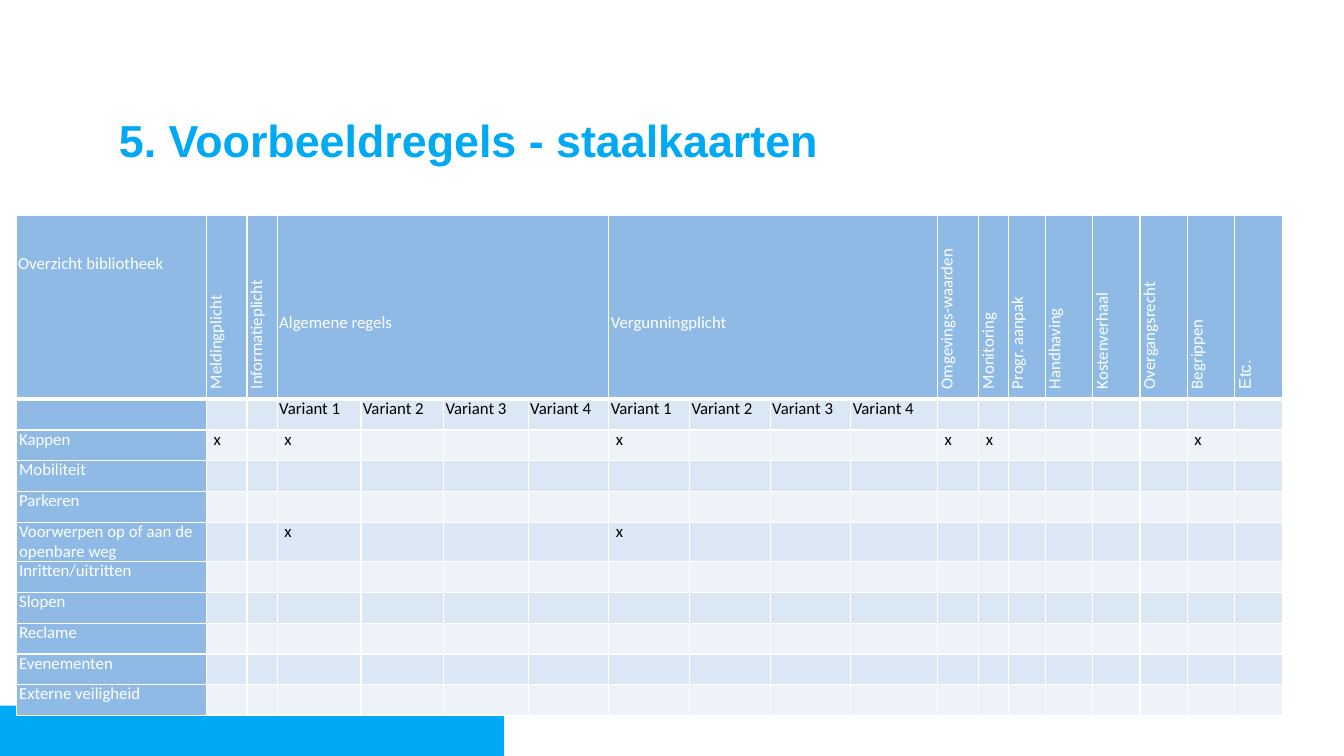
from math import cos, pi, sin

from lxml.etree import SubElement
from pptx import Presentation
from pptx.dml.color import RGBColor
from pptx.enum.text import MSO_ANCHOR, MSO_AUTO_SIZE, PP_ALIGN
from pptx.oxml.ns import qn
from pptx.util import Inches, Pt

TITLE = "5. Voorbeeldregels - staalkaarten"
CORNER_HEADER = "Overzicht bibliotheek"
WIDE_HEADERS = {3: "Algemene regels", 7: "Vergunningplicht"}
VERTICAL_HEADERS = {
    1: "Meldingplicht", 2: "Informatieplicht", 11: "Omgevings-waarden",
    12: "Monitoring", 13: "Progr. aanpak", 14: "Handhaving",
    15: "Kostenverhaal", 16: "Overgangsrecht", 17: "Begrippen", 18: "Etc.",
}
VARIANTS = 4
# Topic and the columns that are marked for it
TOPICS = [
    ("Kappen", (1, 3, 7, 11, 12, 17)),
    ("Mobiliteit", ()),
    ("Parkeren", ()),
    ("Voorwerpen op of aan de openbare weg", (3, 7)),
    ("Inritten/uitritten", ()),
    ("Slopen", ()),
    ("Reclame", ()),
    ("Evenementen", ()),
    ("Externe veiligheid", ()),
]

COLORS = {"accent": "00A9F3", "header": "8EBAE5", "odd": "DBE7F5",
          "even": "EEF3FA", "white": "FFFFFF", "black": "000000"}
COLUMN_WIDTHS = [1.89, 0.4, 0.3, 0.83, 0.82, 0.84, 0.8, 0.8, 0.8, 0.8, 0.86,
                 0.41, 0.29, 0.37] + [0.47] * 5
HEADER_HEIGHT, ROW_HEIGHT, TWO_LINE_HEIGHT = 1.82, 0.26, 0.39
ROW_HEIGHTS = [HEADER_HEIGHT, ROW_HEIGHT] + [
    TWO_LINE_HEIGHT if len(topic) > 30 else ROW_HEIGHT for topic, _ in TOPICS]
TABLE_LEFT, TABLE_TOP = 0.16, 2.14
LINE_PITCH = 14
BAND_TOP, BAND_RADIUS, BAND_WIDTH = 7.02, 0.49, 2.94
BAND_LEFTS = (-0.01, 2.46)


def color(name):
    return RGBColor.from_string(COLORS[name])


def set_format(target, values):
    for name, value in values.items():
        setattr(target, name, value)


def add_band(slide, left):
    """Draw a footer band whose top right corner is a quarter circle."""
    bottom = BAND_TOP + BAND_RADIUS
    center = left + BAND_WIDTH - BAND_RADIUS
    steps = 24
    angles = [pi / 2 * (1 - step / steps) for step in range(steps + 1)]
    arc = [(center + BAND_RADIUS * cos(angle), bottom - BAND_RADIUS * sin(angle))
           for angle in angles]
    builder = slide.shapes.build_freeform(left, bottom, scale=Inches(1))
    builder.add_line_segments([(left, BAND_TOP)] + arc, close=True)
    band = builder.convert_to_shape()
    band.shadow.inherit = False
    band.fill.solid()
    band.fill.fore_color.rgb = color("accent")
    band.line.fill.background()


def style_cell(cell, fill, bottom_width):
    properties = cell._tc.get_or_add_tcPr()
    for side, width in (("L", 1), ("R", 1), ("T", 1), ("B", bottom_width)):
        line = SubElement(properties, qn(f"a:ln{side}"), w=str(Pt(width)))
        solid = SubElement(line, qn("a:solidFill"))
        SubElement(solid, qn("a:srgbClr"), val=COLORS["white"])
    cell.fill.solid()
    cell.fill.fore_color.rgb = color(fill)
    set_format(cell, {"margin_left": Inches(0.02), "margin_right": Inches(0.02),
                      "margin_top": 0, "margin_bottom": 0})
    cell.text_frame.paragraphs[0].line_spacing = Pt(LINE_PITCH)


def write(cell, text, ink, font="Calibri", left=0.02, lines_above=0):
    cell.margin_left = Inches(left)
    cell.margin_top = Pt(LINE_PITCH * lines_above)
    run = cell.text_frame.paragraphs[0].add_run()
    run.text = text
    set_format(run.font, {"name": font, "size": Pt(12), "bold": False})
    run.font.color.rgb = color(ink)


def write_vertical(cell, text):
    cell._tc.get_or_add_tcPr().set("vert", "vert270")
    paragraph = cell.text_frame.paragraphs[0]
    paragraph._p.get_or_add_pPr().set("marL", str(Inches(0.08)))
    write(cell, text, "white", "Arial" if text == "Etc." else "Calibri")


def add_overview(slide):
    frame = slide.shapes.add_table(
        len(ROW_HEIGHTS), len(COLUMN_WIDTHS), Inches(TABLE_LEFT), Inches(TABLE_TOP),
        Inches(sum(COLUMN_WIDTHS)), Inches(sum(ROW_HEIGHTS)))
    table = frame.table
    for column, width in zip(table.columns, COLUMN_WIDTHS):
        column.width = Inches(width)
    for row, height in zip(table.rows, ROW_HEIGHTS):
        row.height = Inches(height)

    for row in range(len(ROW_HEIGHTS)):
        for column in range(len(COLUMN_WIDTHS)):
            body = "odd" if row % 2 else "even"
            fill = "header" if row == 0 or column == 0 else body
            style_cell(table.cell(row, column), fill, 3 if row == 0 else 1)

    write(table.cell(0, 0), CORNER_HEADER, "white", lines_above=2)
    for column, text in VERTICAL_HEADERS.items():
        write_vertical(table.cell(0, column), text)
    for start, text in WIDE_HEADERS.items():
        table.cell(0, start).merge(table.cell(0, start + VARIANTS - 1))
        write(table.cell(0, start), text, "white", lines_above=5)
        for offset in range(VARIANTS):
            write(table.cell(1, start + offset), f"Variant {offset + 1}", "black")
    for row, (topic, marked) in enumerate(TOPICS, start=2):
        write(table.cell(row, 0), topic, "white", left=0.03)
        for column in marked:
            write(table.cell(row, column), "x", "black", left=0.07)


def add_title(slide):
    title = slide.shapes.title
    set_format(title, {"left": Inches(1.18), "top": Inches(1.18),
                       "width": Inches(10.97), "height": Inches(0.79)})
    frame = title.text_frame
    frame.text = TITLE
    set_format(frame, {"margin_left": 0, "margin_right": 0, "margin_top": 0,
                       "margin_bottom": 0, "word_wrap": True,
                       "auto_size": MSO_AUTO_SIZE.NONE,
                       "vertical_anchor": MSO_ANCHOR.TOP})
    paragraph = frame.paragraphs[0]
    set_format(paragraph, {"alignment": PP_ALIGN.LEFT, "line_spacing": 0.9})
    font = paragraph.runs[0].font
    set_format(font, {"name": "Arial", "size": Pt(32), "bold": True})
    font.color.rgb = color("accent")


def main():
    presentation = Presentation()
    presentation.slide_width = Inches(13.33)
    presentation.slide_height = Inches(7.5)
    slide = presentation.slides.add_slide(presentation.slide_layouts[5])
    for left in BAND_LEFTS:
        add_band(slide, left)
    add_overview(slide)
    add_title(slide)
    presentation.save("out.pptx")


if __name__ == "__main__":
    main()
